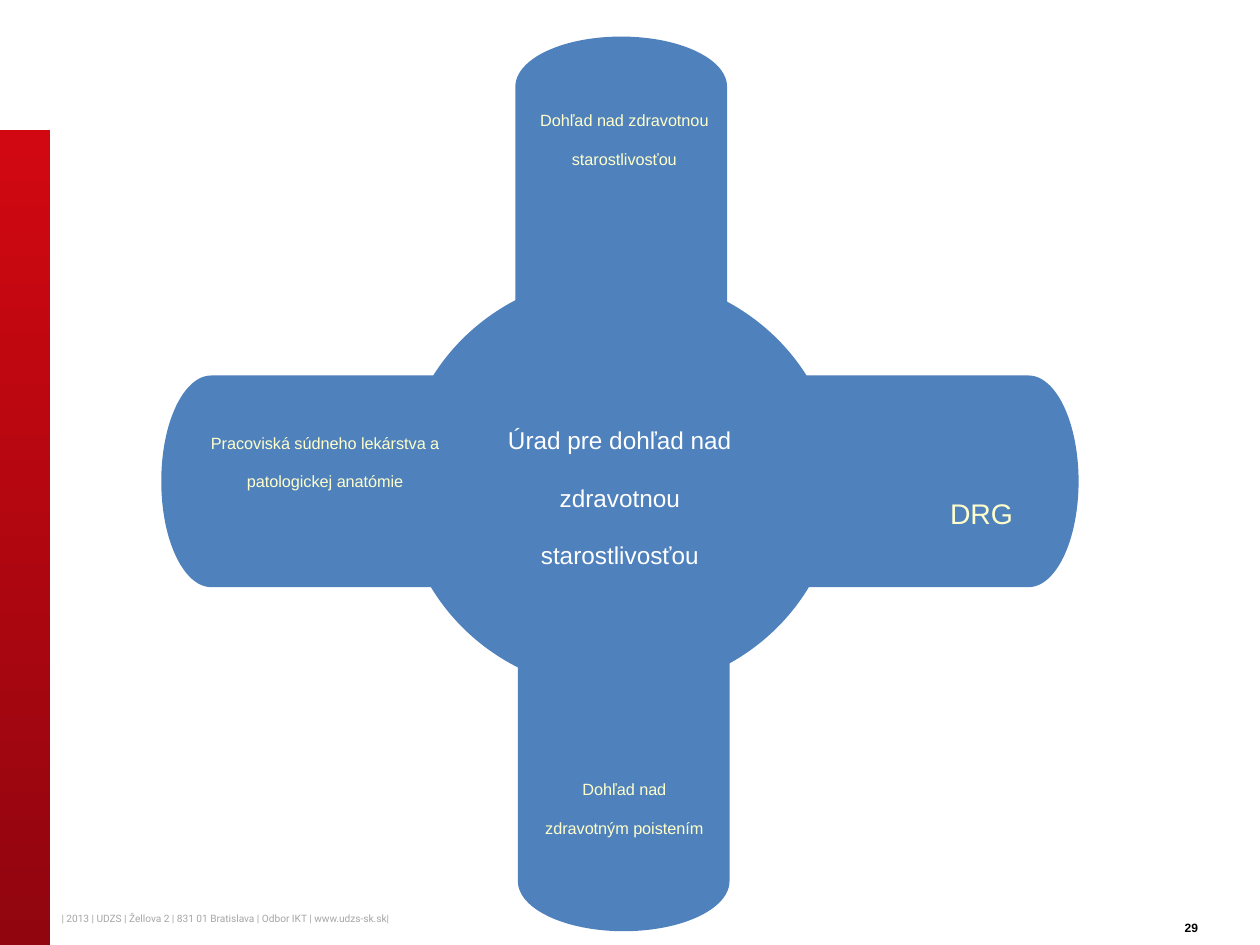
from typing import NamedTuple

from pptx import Presentation
from pptx.dml.color import RGBColor
from pptx.enum.shapes import MSO_SHAPE
from pptx.enum.text import MSO_ANCHOR, PP_ALIGN
from pptx.util import Inches, Pt

COLORS = {
    "blue": "4F81BD",
    "cream": "FFFFCC",
    "white": "FFFFFF",
    "black": "000000",
    "gray": "A6A6A6",
    "red": "D10811",
    "dark_red": "91050F",
}


class Box(NamedTuple):
    left: float
    top: float
    width: float
    height: float


class Arm(NamedTuple):
    left: float
    top: float
    rotation: int


class Label(NamedTuple):
    text: str
    box: Box
    size: int = 16


ARM_WIDTH, ARM_HEIGHT = 2.38, 1.68
ARMS = [
    Arm(3.74, 0.64, 90),
    Arm(3.76, 5.36, 270),
    Arm(1.28, 2.98, 0),
    Arm(6.18, 2.98, 180),
]
LABELS = [
    Label("Dohľad nad zdravotnou starostlivosťou", Box(4.13, 0.68, 1.65, 0.91)),
    Label("Dohľad nad zdravotným poistením", Box(4.21, 5.99, 1.49, 0.91)),
    Label("DRG", Box(7.27, 3.63, 1.04, 0.4), size=28),
    Label("Pracoviská súdneho lekárstva a patologickej anatómie",
          Box(1.54, 3.24, 2.08, 1.18)),
]


def color(name: str) -> RGBColor:
    return RGBColor.from_string(COLORS[name])


def write(shape, text: str, *, size: int, ink: str, font: str = "Arial",
          bold: bool = False, align=PP_ALIGN.CENTER, anchor=MSO_ANCHOR.TOP,
          line_spacing: float = 1.0) -> None:
    """Write one subscript paragraph into a shape."""
    frame = shape.text_frame
    frame.word_wrap = True
    frame.vertical_anchor = anchor
    paragraph = frame.paragraphs[0]
    paragraph.alignment = align
    paragraph.line_spacing = line_spacing
    run = paragraph.add_run()
    run.text = text
    run.font.name = font
    run.font.size = Pt(size)
    run.font.bold = bold
    run.font.color.rgb = color(ink)
    run._r.get_or_add_rPr().set("baseline", "-25000")


def add_text(slide, text: str, box: Box, **text_format) -> None:
    write(slide.shapes.add_textbox(*map(Inches, box)), text, **text_format)


def add_block(slide, kind, box: Box, rotation: int = 0):
    block = slide.shapes.add_shape(kind, *map(Inches, box))
    block.rotation = rotation
    block.shadow.inherit = False
    block.line.fill.background()
    block.fill.solid()
    block.fill.fore_color.rgb = color("blue")
    return block


def main() -> None:
    deck = Presentation()
    deck.slide_width, deck.slide_height = Inches(10), Inches(7.5)
    slide = deck.slides.add_slide(deck.slide_layouts[6])

    # Page number and footer
    add_text(slide, "29", Box(9.08, 7.14, 0.75, 0.3), size=12, ink="black", bold=True)
    add_text(slide,
             "| 2013 | UDZS | Žellova 2 | 831 01 Bratislava | Odbor IKT | www.udzs-sk.sk|",
             Box(0.39, 7.1, 5.33, 0.38), size=10, ink="gray", font="Roboto",
             align=PP_ALIGN.LEFT, line_spacing=0.9)

    # Red side bar, darker towards the bottom
    side_bar = add_block(slide, MSO_SHAPE.RECTANGLE, Box(0, 1.03, 0.4, 6.47))
    side_bar.fill.gradient()
    side_bar.fill.gradient_angle = 270
    for stop, name in zip(side_bar.fill.gradient_stops, ("red", "dark_red")):
        stop.color.rgb = color(name)

    # Hub with the name of the office
    hub = add_block(slide, MSO_SHAPE.OVAL, Box(3.19, 2.18, 3.46, 3.31))
    write(hub, "Úrad pre dohľad nad zdravotnou starostlivosťou",
          size=24, ink="white", anchor=MSO_ANCHOR.MIDDLE)

    # Four arms around the hub
    for arm in ARMS:
        add_block(slide, MSO_SHAPE.FLOWCHART_STORED_DATA,
                  Box(arm.left, arm.top, ARM_WIDTH, ARM_HEIGHT), arm.rotation)

    # Names of the arms
    for label in LABELS:
        add_text(slide, label.text, label.box, size=label.size, ink="cream")

    deck.save("out.pptx")


if __name__ == "__main__":
    main()
